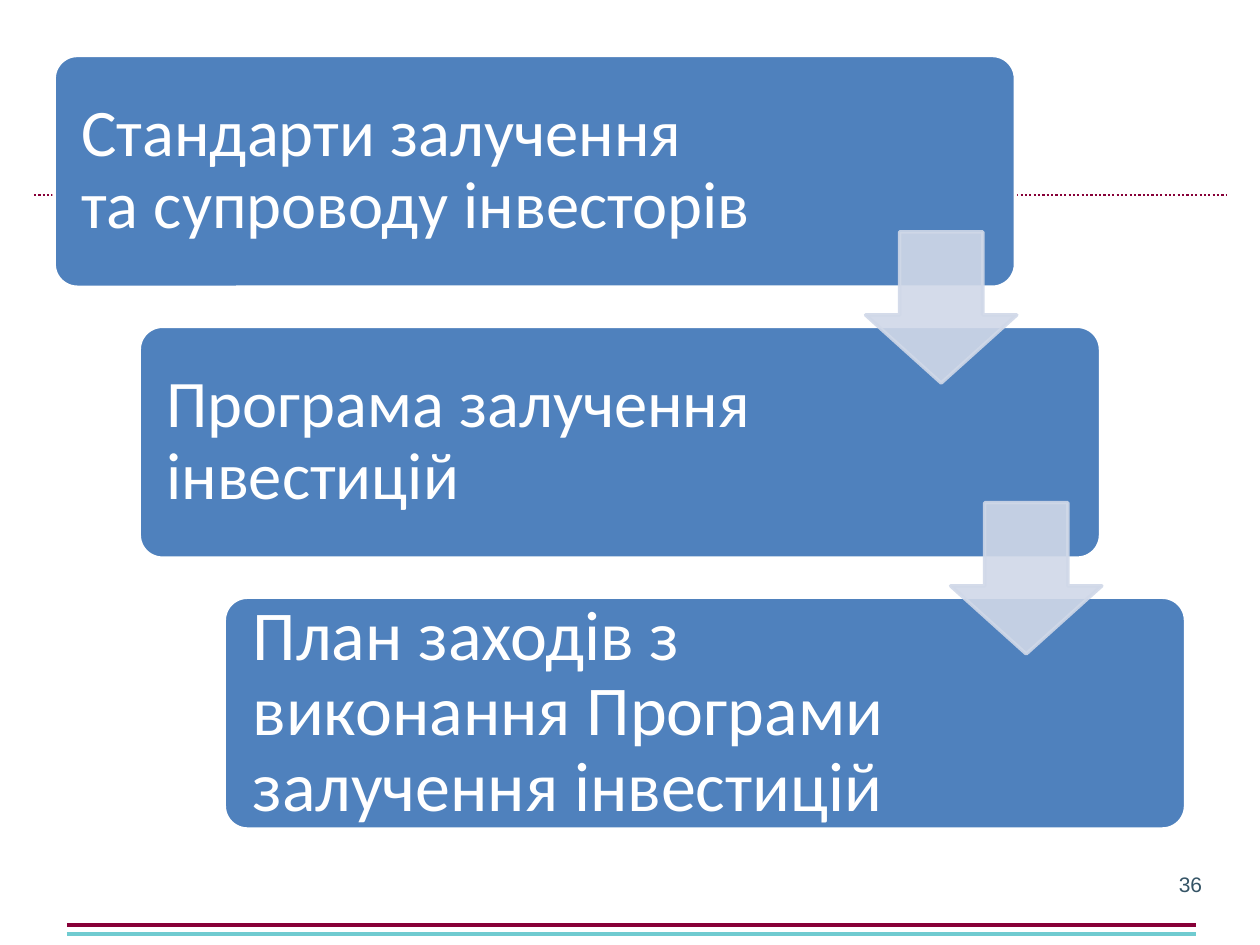
from dataclasses import dataclass

from lxml import etree
from pptx import Presentation
from pptx.dml.color import RGBColor
from pptx.enum.dml import MSO_LINE
from pptx.enum.shapes import MSO_CONNECTOR, MSO_SHAPE
from pptx.enum.text import MSO_ANCHOR, PP_ALIGN
from pptx.oxml.ns import qn
from pptx.util import Inches, Pt

ROUNDED = MSO_SHAPE.ROUNDED_RECTANGLE
DOWN_ARROW = MSO_SHAPE.DOWN_ARROW
STRAIGHT = MSO_CONNECTOR.STRAIGHT
DOTTED = MSO_LINE.ROUND_DOT
MIDDLE = MSO_ANCHOR.MIDDLE
LEFT, RIGHT = PP_ALIGN.LEFT, PP_ALIGN.RIGHT

COLORS = {"box": "4F81BD", "white": "FFFFFF", "arrow": "D0D8E8",
          "wine": "870038", "aqua": "70CBD0", "number": "355466"}

# Staircase grid, in inches
X0, Y0 = 0.43, 0.44
STEP_X, STEP_Y = 0.675, 2.15
BOX_W, BOX_H = 7.63, 1.84
PAD = 0.055
TEXT_W = 5.65
ARROW = 1.2
ARROW_DX, ARROW_DY = 6.44, 1.4


@dataclass
class Step:
    text: str
    size: int
    inset: float


@dataclass
class Rule:
    x1: float
    x2: float
    y: float
    color: str
    width: float
    dash: object = None


STEPS = [
    Step("Стандарти залучення\nта супроводу інвесторів", 38, 0.16),
    Step("Програма залучення інвестицій", 38, 0.16),
    Step("План заходів з виконання Програми залучення інвестицій", 40, 0.17),
]
RULES = [
    Rule(0.53, 9.49, 7.34, "wine", 2.25),
    Rule(0.53, 9.49, 7.41, "aqua", 2.25),
    Rule(0.27, 9.73, 1.55, "wine", 1.25, DOTTED),
]


def rgb(name: str) -> RGBColor:
    return RGBColor.from_string(COLORS[name])


def add_text(slide, text: str, x: float, y: float, w: float, h: float, *,
             size: float, font: str, color: str, inset: float = 0.1,
             align=LEFT, spacing: float = 1.0) -> None:
    tf = slide.shapes.add_textbox(Inches(x), Inches(y), Inches(w), Inches(h)).text_frame
    tf.word_wrap = True
    tf.vertical_anchor = MIDDLE
    tf.margin_left = tf.margin_right = Inches(inset)
    tf.margin_top = tf.margin_bottom = Inches(inset)
    p = tf.paragraphs[0]
    p.text = text
    p.alignment = align
    p.line_spacing = spacing
    for r in p.runs:
        r.font.size = Pt(size)
        r.font.name = font
        r.font.color.rgb = rgb(color)


def add_block(slide, kind, x: float, y: float, w: float, h: float, *,
              fill: str, line: str, adjust: list, alpha: int = 100) -> None:
    sp = slide.shapes.add_shape(kind, Inches(x), Inches(y), Inches(w), Inches(h))
    sp.shadow.inherit = False
    for i, value in enumerate(adjust):
        sp.adjustments[i] = value
    sp.fill.solid()
    sp.fill.fore_color.rgb = rgb(fill)
    sp.line.color.rgb = rgb(line)
    sp.line.width = Pt(2)
    if alpha < 100:
        for clr in sp.element.spPr.iter(qn("a:srgbClr")):
            etree.SubElement(clr, qn("a:alpha")).set("val", str(alpha * 1000))


def add_rule(slide, rule: Rule) -> None:
    y = Inches(rule.y)
    cx = slide.shapes.add_connector(STRAIGHT, Inches(rule.x1), y, Inches(rule.x2), y)
    cx.line.color.rgb = rgb(rule.color)
    cx.line.width = Pt(rule.width)
    if rule.dash:
        cx.line.dash_style = rule.dash
    etree.SubElement(cx.element.spPr, qn("a:effectLst"))


def main() -> None:
    prs = Presentation()
    prs.slide_width, prs.slide_height = Inches(10), Inches(7.5)
    slide = prs.slides.add_slide(prs.slide_layouts[6])

    # Page number and rules
    add_text(slide, "36", 7.31, 6.82, 2.33, 0.4, size=12, font="Arial",
             color="number", align=RIGHT)
    for rule in RULES:
        add_rule(slide, rule)

    # Steps
    for i, step in enumerate(STEPS):
        x, y = X0 + i * STEP_X, Y0 + i * STEP_Y
        add_block(slide, ROUNDED, x, y, BOX_W, BOX_H, fill="box",
                  line="white", adjust=[0.1])
        add_text(slide, step.text, x + PAD, y + PAD, TEXT_W, BOX_H - 2 * PAD,
                 size=step.size, font="Calibri", color="white",
                 inset=step.inset, spacing=0.9)

    # Arrows between the steps
    for i in range(len(STEPS) - 1):
        add_block(slide, DOWN_ARROW, X0 + ARROW_DX + i * STEP_X,
                  Y0 + ARROW_DY + i * STEP_Y, ARROW, ARROW, fill="arrow",
                  line="arrow", adjust=[0.55, 0.45], alpha=90)

    prs.save("out.pptx")


if __name__ == "__main__":
    main()
